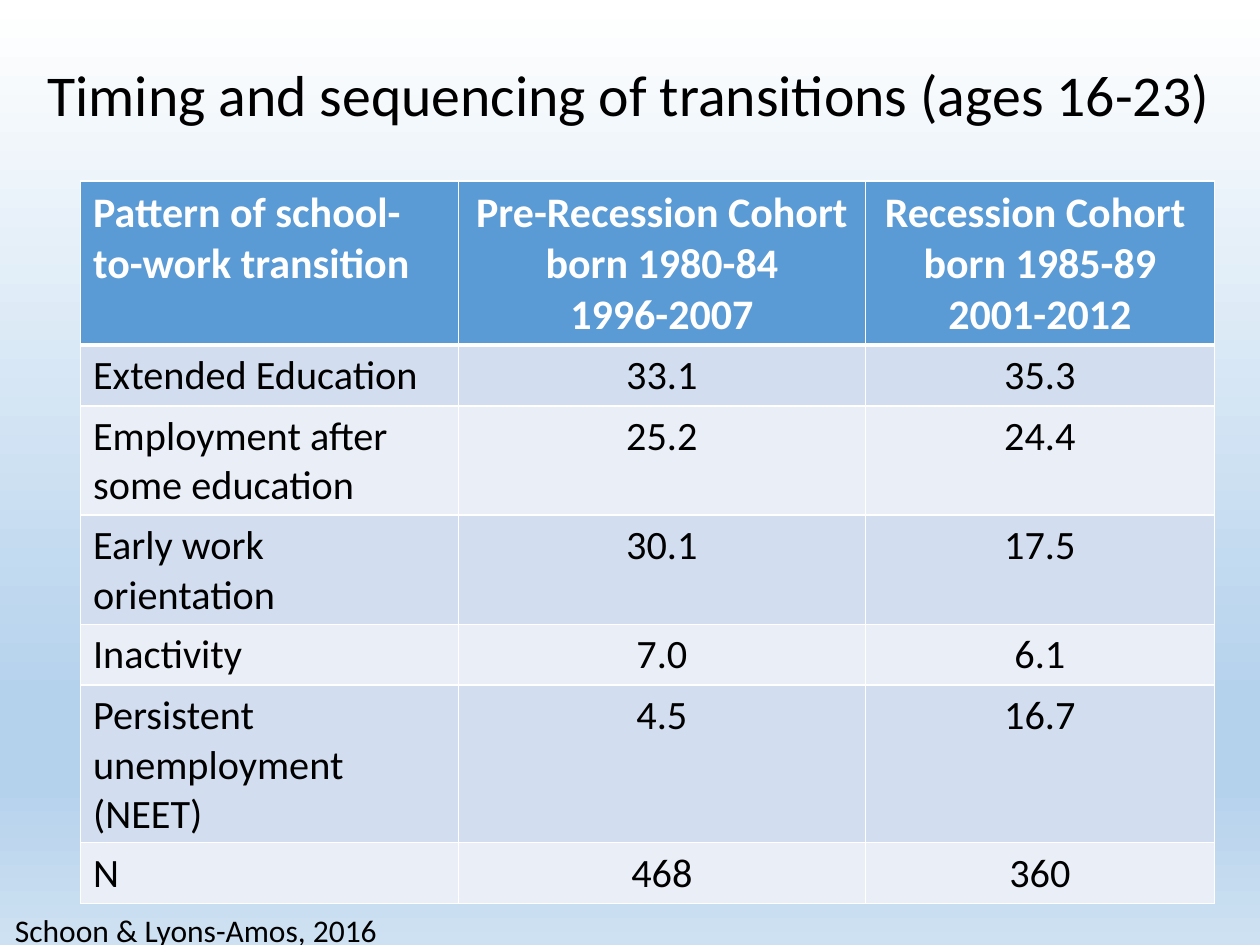
from lxml import etree
from pptx import Presentation
from pptx.dml.color import RGBColor
from pptx.enum import text
from pptx.oxml.ns import qn
from pptx.util import Pt

# Content
TITLE = "Timing and sequencing of transitions (ages 16-23)"
SOURCE = "Schoon & Lyons-Amos, 2016"
HEADER = [
    ["Pattern of school-to-work transition"],
    ["Pre-Recession Cohort", "born 1980-84", "1996-2007"],
    ["Recession Cohort ", "born 1985-89", "2001-2012"],
]
PATTERNS = [
    ("Extended Education", "33.1", "35.3"),
    ("Employment after some education", "25.2", "24.4"),
    ("Early work orientation", "30.1", "17.5"),
    ("Inactivity", "7.0", "6.1"),
    ("Persistent unemployment (NEET)", "4.5", "16.7"),
    ("N", "468", "360"),
]

# Style
FONT = "Calibri"
COLORS = {
    "text": "000000",
    "white": "FFFFFF",
    "header": "5B9BD5",
    "odd": "D2DEEF",
    "even": "EAEFF7",
}
BACKGROUND_STOPS = [(0, "FFFFFF"), (74, "B5D2EC"), (83, "B5D2EC"), (100, "CEE1F2")]
COLUMN_WIDTHS = [216, 232.5, 199.5]
ROW_HEIGHT = 29.5  # minimum; rows grow with their text


def add_run(paragraph, words, size, color, bold=False):
    run = paragraph.add_run()
    run.text = words
    run.font.name = FONT
    run.font.size = Pt(size)
    run.font.bold = bold
    run.font.color.rgb = RGBColor.from_string(COLORS[color])


def add_label(slide, words, box, size, anchor):
    shape = slide.shapes.add_textbox(*(Pt(length) for length in box))
    frame = shape.text_frame
    frame.word_wrap = True
    frame.vertical_anchor = anchor
    add_run(frame.paragraphs[0], words, size, "text")
    return frame


def set_background(slide):
    fill = slide.background.fill
    fill.gradient()
    fill.gradient_angle = 270
    stops = slide.element.find(".//" + qn("a:gsLst"))
    for stop in list(stops):
        stops.remove(stop)
    for position, color in BACKGROUND_STOPS:
        stop = etree.SubElement(stops, qn("a:gs"), pos=str(position * 1000))
        etree.SubElement(stop, qn("a:srgbClr"), val=color)


def set_borders(cell, widths):
    properties = cell._tc.get_or_add_tcPr()
    for index, (side, width) in enumerate(widths.items()):
        line = etree.Element(qn("a:" + side), w=str(Pt(width)))
        fill = etree.SubElement(line, qn("a:solidFill"))
        etree.SubElement(fill, qn("a:srgbClr"), val=COLORS["white"])
        properties.insert(index, line)


def fill_cell(cell, lines, row, column):
    is_header = row == 0
    fill = "header" if is_header else "odd" if row % 2 else "even"
    cell.fill.solid()
    cell.fill.fore_color.rgb = RGBColor.from_string(COLORS[fill])
    set_borders(cell, {"lnL": 1, "lnR": 1, "lnT": 3 if row == 1 else 1,
                       "lnB": 3 if is_header else 1})
    frame = cell.text_frame
    for index, words in enumerate(lines):
        paragraph = frame.add_paragraph() if index else frame.paragraphs[0]
        if column:
            paragraph.alignment = text.PP_ALIGN.CENTER
        add_run(paragraph, words, 24 if is_header else 23,
                "white" if is_header else "text", is_header)


def add_transition_table(slide):
    rows = [HEADER] + [[[words] for words in pattern] for pattern in PATTERNS]
    table = slide.shapes.add_table(
        len(rows), len(COLUMN_WIDTHS), Pt(46), Pt(103.5),
        Pt(sum(COLUMN_WIDTHS)), Pt(ROW_HEIGHT * len(rows))).table
    for column, width in zip(table.columns, COLUMN_WIDTHS):
        column.width = Pt(width)
    for row, cells in enumerate(rows):
        table.rows[row].height = Pt(ROW_HEIGHT)
        for column, lines in enumerate(cells):
            fill_cell(table.cell(row, column), lines, row, column)


def main():
    presentation = Presentation()
    presentation.slide_width, presentation.slide_height = Pt(720), Pt(540)
    slide = presentation.slides.add_slide(presentation.slide_layouts[6])
    set_background(slide)

    # Title, table and source line
    title = add_label(slide, TITLE, (20, 3.5, 700, 104.5), 33, text.MSO_ANCHOR.MIDDLE)
    title.paragraphs[0].line_spacing = 0.9
    add_transition_table(slide)
    add_label(slide, SOURCE, (1.5, 517, 391, 29), 18, text.MSO_ANCHOR.TOP)

    presentation.save("out.pptx")


if __name__ == "__main__":
    main()
